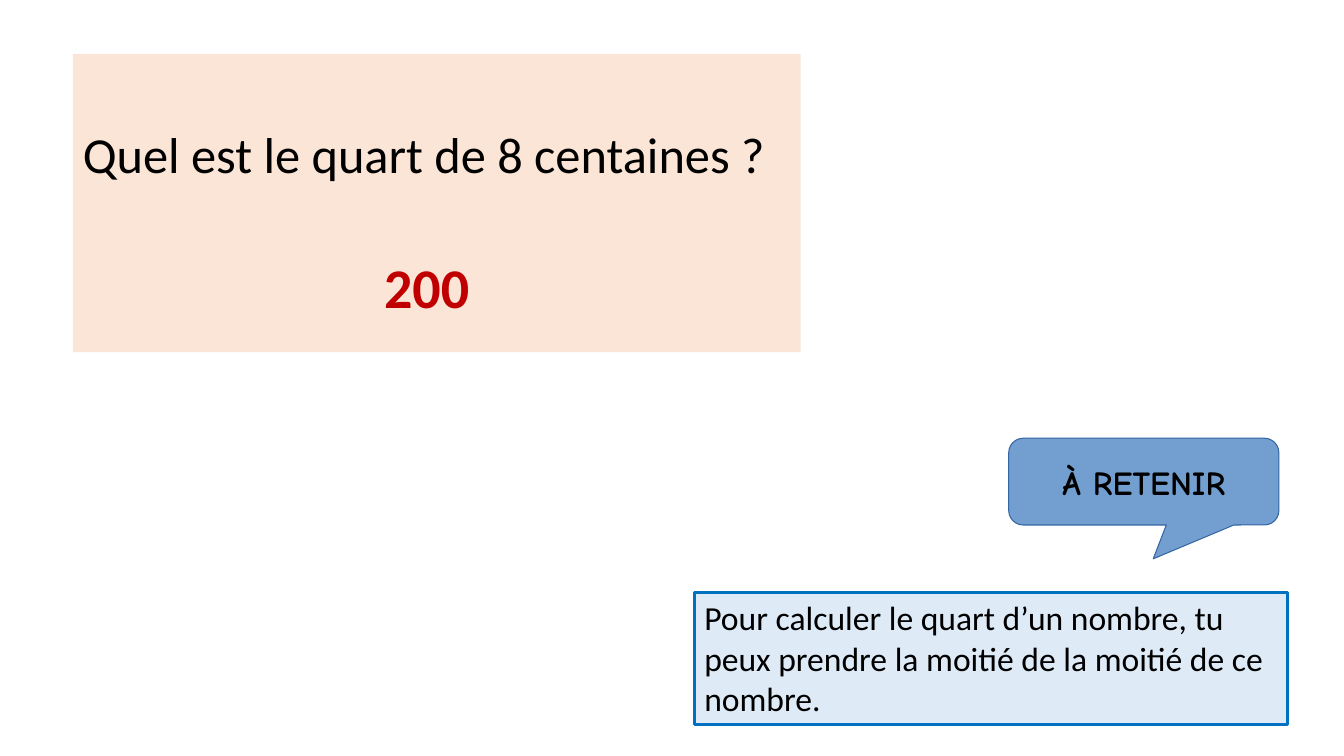
from pptx import Presentation
from pptx.dml.color import RGBColor
from pptx.enum import shapes, text
from pptx.util import Pt

BLACK = RGBColor(0x00, 0x00, 0x00)
RED = RGBColor(0xC0, 0x00, 0x00)
PEACH = RGBColor(0xFB, 0xE5, 0xD6)
CALLOUT_FILL = RGBColor(0x72, 0x9F, 0xCF)
CALLOUT_LINE = RGBColor(0x34, 0x65, 0xA4)
RULE_FILL = RGBColor(0xDE, 0xEB, 0xF7)
RULE_LINE = RGBColor(0x00, 0x70, 0xC0)


def place(shape, left, top, width, height):
    """Set a shape's position and size in points."""
    shape.left, shape.top = Pt(left), Pt(top)
    shape.width, shape.height = Pt(width), Pt(height)


def write(shape, words, size, color=BLACK, bold=False, font="Calibri",
          align=text.PP_ALIGN.LEFT, anchor=text.MSO_ANCHOR.TOP, wrap=True):
    """Write one formatted paragraph into a shape and return it."""
    frame = shape.text_frame
    frame.auto_size = text.MSO_AUTO_SIZE.NONE
    frame.word_wrap = wrap
    frame.vertical_anchor = anchor
    para = frame.paragraphs[0]
    para.alignment = align
    span = para.add_run()
    span.text = words
    span.font.name = font
    span.font.size = Pt(size)
    span.font.bold = bold
    span.font.color.rgb = color
    return para


def add_panel(page, kind, box, fill, line, weight):
    """Add a filled and outlined shape without a shadow."""
    panel = page.shapes.add_shape(kind, *map(Pt, box))
    panel.shadow.inherit = False
    panel.fill.solid()
    panel.fill.fore_color.rgb = fill
    panel.line.color.rgb = line
    panel.line.width = Pt(weight)
    return panel


def add_question(page, left, top, width, height):
    """Place the question as the title, with its answer below."""
    title = page.shapes.title
    place(title, left, top, width, height)
    title.fill.solid()
    title.fill.fore_color.rgb = PEACH
    para = write(title, "Quel est le quart de 8 centaines ?", 36)
    para.line_spacing = 0.9
    title.text_frame.margin_top = Pt(54)
    answer = page.shapes.add_textbox(
        Pt(left + 199.5), Pt(top + 138), Pt(106.5), Pt(55.5))
    write(answer, "200", 40, RED, True, align=text.PP_ALIGN.CENTER)


def add_reminder(page, left, top, width, height):
    """Place the callout above the rule to remember."""
    callout_width, rule_height = 193, 94.5
    callout = add_panel(
        page, shapes.MSO_SHAPE.ROUNDED_RECTANGULAR_CALLOUT,
        (left + width - callout_width - 6, top, callout_width, 62),
        CALLOUT_FILL, CALLOUT_LINE, 0.75)
    for index, value in enumerate((0.035, 0.89, 0.167)):
        callout.adjustments[index] = value
    write(callout, "À RETENIR", 24, bold=True, font="Comic Neue",
          align=text.PP_ALIGN.CENTER, anchor=text.MSO_ANCHOR.MIDDLE, wrap=False)
    rule = add_panel(
        page, shapes.MSO_SHAPE.RECTANGLE,
        (left, top + height - rule_height, width, rule_height),
        RULE_FILL, RULE_LINE, 2.25)
    write(rule, "Pour calculer le quart d’un nombre, tu peux prendre "
                "la moitié de la moitié de ce nombre.", 24)


def main():
    """Build and save the slide."""
    deck = Presentation()
    deck.slide_width, deck.slide_height = Pt(960), Pt(540)
    page = deck.slides.add_slide(deck.slide_layouts[5])
    add_question(page, 52, 38.5, 520, 213)
    add_reminder(page, 496, 313, 423.5, 204.5)
    deck.save("out.pptx")


if __name__ == "__main__":
    main()
